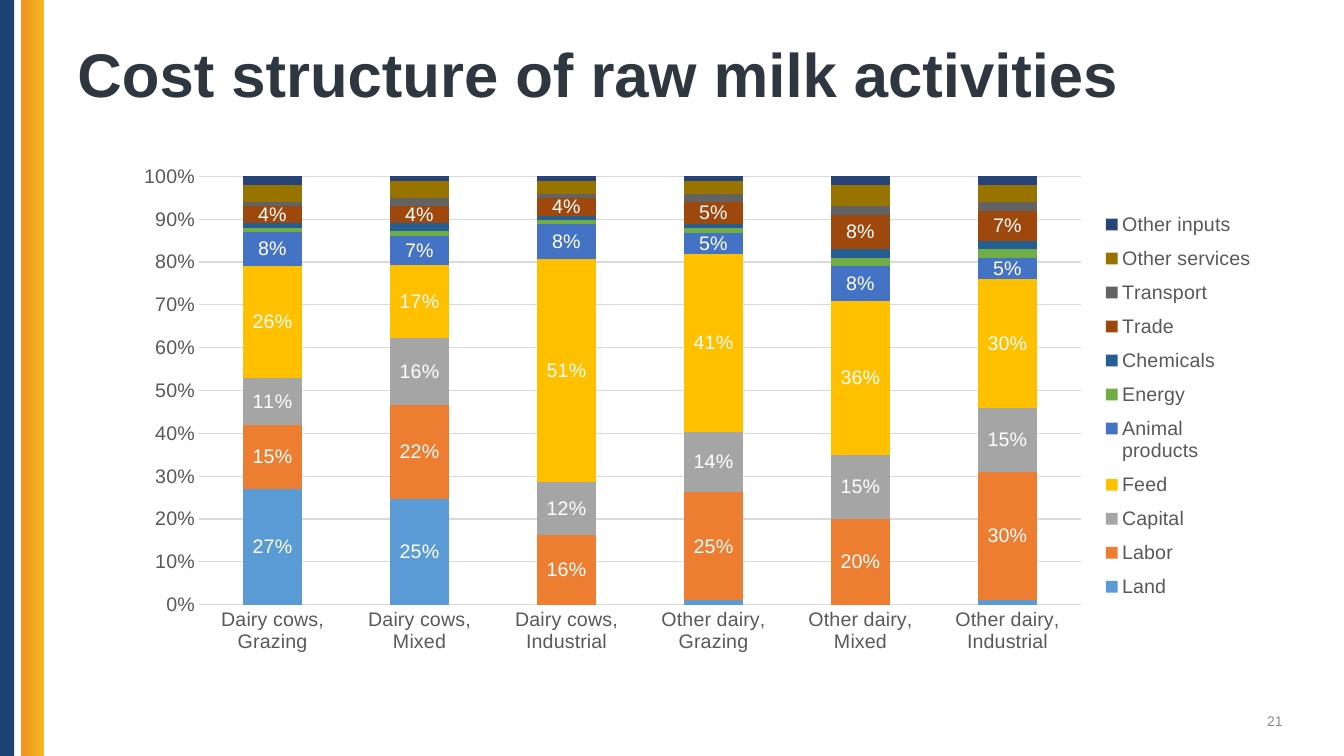
import pptx
import pptx.chart.data
import pptx.dml.color
import pptx.enum.chart
import pptx.enum.shapes
import pptx.enum.text
import pptx.oxml
import pptx.oxml.ns
import pptx.util
from pptx.util import Inches

COLORS = {
    "navy": "1B4273", "orange": "F38F22", "gold": "F1BA20",
    "title": "2E3640", "number": "8C8C8C", "axis": "595959",
    "grid": "D9D9D9", "white": "FFFFFF",
    "Land": "5B9BD5", "Labor": "ED7D31", "Capital": "A5A5A5",
    "Feed": "FFC000", "Animal products": "4472C4", "Energy": "70AD47",
    "Chemicals": "255E91", "Trade": "9E480E", "Transport": "636363",
    "Other services": "997300", "Other inputs": "264478",
}
RGB = {name: pptx.dml.color.RGBColor.from_string(c) for name, c in COLORS.items()}
NS = pptx.oxml.ns.nsdecls("c")


def format_font(font, size, color, bold=False):
    font.name, font.size, font.bold = "Arial", pptx.util.Pt(size), bold
    font.color.rgb = RGB[color]


def add_text(text, box, size, color, bold=False, align="LEFT", spacing=1.0):
    tf = s.shapes.add_textbox(*map(Inches, box)).text_frame
    tf.word_wrap = True
    tf.vertical_anchor = pptx.enum.text.MSO_ANCHOR.MIDDLE
    p = tf.paragraphs[0]
    p.alignment = pptx.enum.text.PP_ALIGN[align]
    p.line_spacing = spacing
    r = p.add_run()
    r.text = text
    format_font(r.font, size, color, bold)


prs = pptx.Presentation()
prs.slide_width, prs.slide_height = Inches(13.33), Inches(7.5)
s = prs.slides.add_slide(prs.slide_layouts[6])

# Side bands
for left, width, stops in [(-0.03, 0.17, ["navy"]), (0.21, 0.23, ["orange", "gold"])]:
    sp = s.shapes.add_shape(pptx.enum.shapes.MSO_SHAPE.RECTANGLE,
                            Inches(left), 0, Inches(width), Inches(7.5))
    sp.shadow.inherit = False
    sp.line.fill.background()
    if len(stops) == 1:
        sp.fill.solid()
        sp.fill.fore_color.rgb = RGB[stops[0]]
    else:
        sp.fill.gradient()
        sp.fill.gradient_angle = 0
        for stop, color in zip(sp.fill.gradient_stops, stops):
            stop.color.rgb = RGB[color]

# Title and slide number
add_text("Cost structure of raw milk activities", (0.67, 0.31, 12.16, 0.92),
         44, "title", bold=True, spacing=0.9)
add_text("21", (9.82, 6.95, 3, 0.4), 10, "number", align="RIGHT")

# Chart data
costs = {
    "Land": (0.27, 0.25, 0, 0.01, 0, 0.01),
    "Labor": (0.15, 0.22, 0.16, 0.25, 0.2, 0.3),
    "Capital": (0.11, 0.16, 0.12, 0.14, 0.15, 0.15),
    "Feed": (0.26, 0.17, 0.51, 0.41, 0.36, 0.3),
    "Animal products": (0.08, 0.07, 0.08, 0.05, 0.08, 0.05),
    "Energy": (0.01, 0.01, 0.01, 0.01, 0.02, 0.02),
    "Chemicals": (0.01, 0.02, 0.01, 0.01, 0.02, 0.02),
    "Trade": (0.04, 0.04, 0.04, 0.05, 0.08, 0.07),
    "Transport": (0.01, 0.02, 0.01, 0.02, 0.02, 0.02),
    "Other services": (0.04, 0.04, 0.03, 0.03, 0.05, 0.04),
    "Other inputs": (0.02, 0.01, 0.01, 0.01, 0.02, 0.02),
}
labelled = {"Land", "Labor", "Capital", "Feed", "Animal products", "Trade"}
data = pptx.chart.data.CategoryChartData(number_format="0%")
data.categories = [f"{herd}, {system}" for herd in ("Dairy cows", "Other dairy")
                   for system in ("Grazing", "Mixed", "Industrial")]
for name, values in costs.items():
    data.add_series(name, values)

# Chart and its bars
chart = s.shapes.add_chart(pptx.enum.chart.XL_CHART_TYPE.COLUMN_STACKED_100,
                           Inches(1.18), Inches(1.55), Inches(11.36), Inches(5),
                           data).chart
format_font(chart.font, 14, "axis")
chart.has_title = False
plot = chart.plots[0]
plot.gap_width, plot.overlap, plot.vary_by_categories = 150, 100, False
for series in plot.series:
    series.format.fill.solid()
    series.format.fill.fore_color.rgb = RGB[series.name]
    if series.name not in labelled:
        continue
    labels = series.data_labels
    labels.show_value = True
    labels.number_format, labels.number_format_is_linked = "0%", False
    format_font(labels.font, 14, "white")
    # Slivers too thin for a label
    thin = [i for i, value in enumerate(series.values) if value < 0.02]
    for place, i in enumerate(thin):
        labels._element.insert(place, pptx.oxml.parse_xml(
            f'<c:dLbl {NS}><c:idx val="{i}"/><c:delete val="1"/></c:dLbl>'))

# Axes
for axis in (chart.category_axis, chart.value_axis):
    axis.major_tick_mark = axis.minor_tick_mark = pptx.enum.chart.XL_TICK_MARK.NONE
    format_font(axis.tick_labels.font, 14, "axis")
value_axis = chart.value_axis
value_axis.minimum_scale, value_axis.maximum_scale, value_axis.major_unit = 0, 1, 0.1
value_axis.tick_labels.number_format = "0%"
value_axis.tick_labels.number_format_is_linked = False
value_axis.format.line.fill.background()
for line in (chart.category_axis.format.line, value_axis.major_gridlines.format.line):
    line.color.rgb = RGB["grid"]
    line.width = pptx.util.Pt(0.75)

# Legend
chart.has_legend = True
legend = chart.legend
legend.position = pptx.enum.chart.XL_LEGEND_POSITION.RIGHT
legend.include_in_layout = False
format_font(legend.font, 14, "axis")

# Fixed places for the plot and the legend, as fractions of the chart
plot_area = chart._chartSpace.chart.plotArea
for parent, index, target, box in [
        (plot_area, 0, '<c:layoutTarget val="inner"/>', (0.07, 0.04, 0.77, 0.85)),
        (legend._element, 1, "", (0.86, 0.09, 0.13, 0.81))]:
    for old in parent.findall(pptx.oxml.ns.qn("c:layout")):
        parent.remove(old)
    modes = "".join(f'<c:{side}Mode val="edge"/>' for side in "xy")
    sizes = "".join(f'<c:{side} val="{v}"/>' for side, v in zip("xywh", box))
    parent.insert(index, pptx.oxml.parse_xml(
        f"<c:layout {NS}><c:manualLayout>{target}{modes}{sizes}"
        "</c:manualLayout></c:layout>"))

prs.save("out.pptx")
